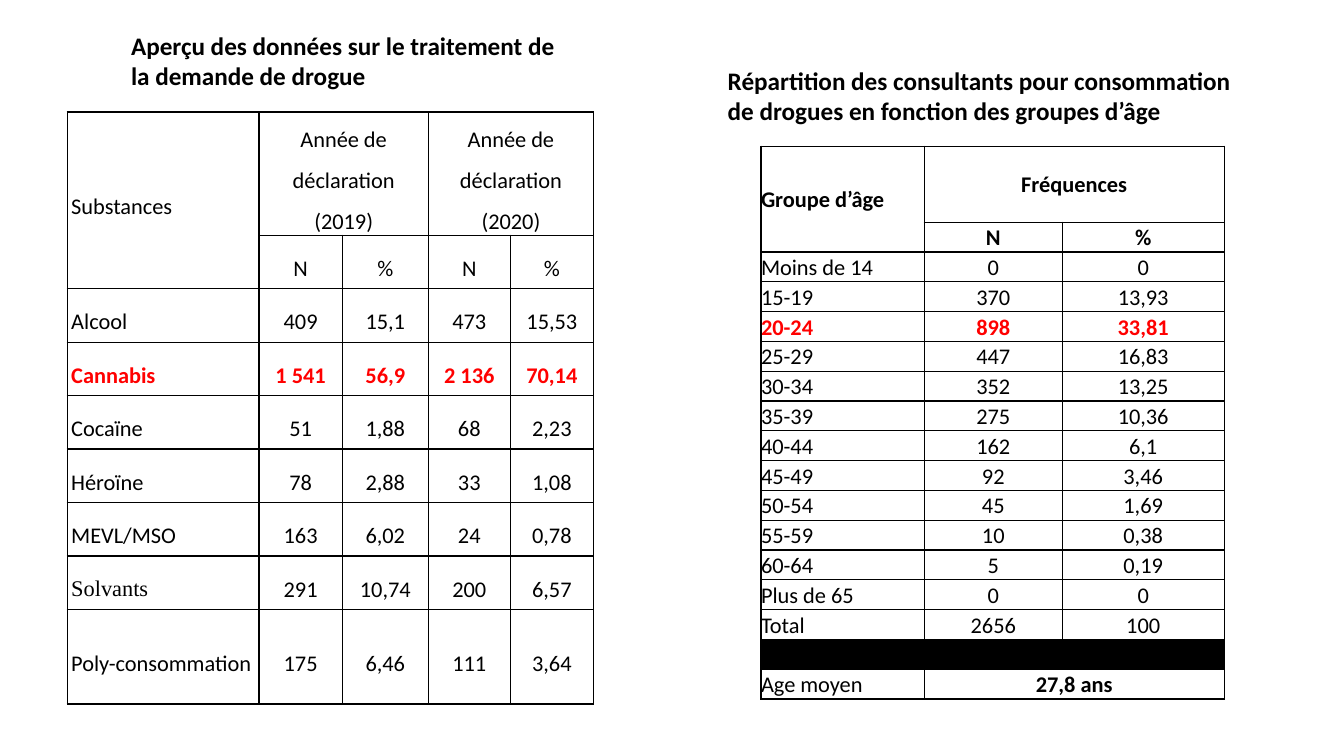
from lxml.etree import SubElement
from pptx import Presentation
from pptx.dml.color import RGBColor
from pptx.enum.text import MSO_ANCHOR as Anchor, MSO_AUTO_SIZE as AutoSize, PP_ALIGN as Align
from pptx.oxml.ns import qn
from pptx.util import Pt

COLOURS = {"ink": "000000", "highlight": "FF0000"}

SUBSTANCES = [
    ("Substances", "Année de déclaration (2019)", "", "Année de déclaration (2020)", ""),
    ("", "N", "%", "N", "%"),
    ("Alcool", "409", "15,1", "473", "15,53"),
    ("Cannabis", "1 541", "56,9", "2 136", "70,14"),
    ("Cocaïne", "51", "1,88", "68", "2,23"),
    ("Héroïne", "78", "2,88", "33", "1,08"),
    ("MEVL/MSO", "163", "6,02", "24", "0,78"),
    ("Solvants", "291", "10,74", "200", "6,57"),
    ("Poly-consommation", "175", "6,46", "111", "3,64"),
]

AGE_GROUPS = [
    ("Groupe d’âge", "Fréquences", ""),
    ("", "N", "%"),
    ("Moins de 14", "0", "0"),
    ("15-19", "370", "13,93"),
    ("20-24", "898", "33,81"),
    ("25-29", "447", "16,83"),
    ("30-34", "352", "13,25"),
    ("35-39", "275", "10,36"),
    ("40-44", "162", "6,1"),
    ("45-49", "92", "3,46"),
    ("50-54", "45", "1,69"),
    ("55-59", "10", "0,38"),
    ("60-64", "5", "0,19"),
    ("Plus de 65", "0", "0"),
    ("Total", "2656", "100"),
    ("", "", ""),
    ("Age moyen", "27,8 ans", ""),
]


def write(frame, text, *, size=16, font="Calibri", colour="ink", bold=False,
          align=Align.LEFT, spacing=1.0):
    """Fill a text frame with one formatted paragraph."""
    paragraph = frame.paragraphs[0]
    paragraph.alignment = align
    paragraph.line_spacing = spacing
    paragraph.space_before = Pt(0)
    words = paragraph.add_run()
    words.text = text
    words.font.size = Pt(size)
    words.font.name = font
    words.font.bold = bold
    words.font.color.rgb = RGBColor.from_string(COLOURS[colour])


def place_heading(heading, box, text):
    """Move a heading placeholder to its box and write its text."""
    heading.left, heading.top, heading.width, heading.height = (Pt(v) for v in box)
    frame = heading.text_frame
    frame.word_wrap = True
    frame.auto_size = AutoSize.NONE
    frame.vertical_anchor = Anchor.TOP
    write(frame, text, size=18, bold=True)


def outline(cell):
    """Draw a thin line on each side of a cell."""
    properties = cell._tc.get_or_add_tcPr()
    for side in ("a:lnL", "a:lnR", "a:lnT", "a:lnB"):
        line = SubElement(properties, qn(side), w=str(Pt(1)))
        fill = SubElement(line, qn("a:solidFill"))
        SubElement(fill, qn("a:srgbClr"), val=COLOURS["ink"])


def place_table(slide, origin, widths, heights, rows, *, merges, highlight, spacing,
                inset=0, label_align=Align.LEFT, bold_cells=(), serif_label=None,
                separator=None):
    """Build a bordered table of labels and centred values at its origin."""
    left, top = origin
    table = slide.shapes.add_table(
        len(rows), len(widths), Pt(left), Pt(top), Pt(sum(widths)), Pt(sum(heights))).table
    table.first_row = table.horz_banding = False
    for column, width in zip(table.columns, widths):
        column.width = Pt(width)
    for r, (values, height) in enumerate(zip(rows, heights)):
        table.rows[r].height = Pt(height)
        for c, value in enumerate(values):
            cell = table.cell(r, c)
            outline(cell)
            cell.margin_left = cell.margin_right = Pt(inset)
            cell.margin_top = cell.margin_bottom = 0
            cell.vertical_anchor = Anchor.MIDDLE
            if r == separator:
                cell.fill.solid()
                cell.fill.fore_color.rgb = RGBColor.from_string(COLOURS["ink"])
            else:
                cell.fill.background()
            write(cell.text_frame, value, spacing=spacing,
                  font="Times New Roman" if value == serif_label else "Calibri",
                  colour="highlight" if r == highlight else "ink",
                  bold=r == highlight or (r, c) in bold_cells,
                  align=Align.CENTER if c else label_align)
    for start, end in merges:
        table.cell(*start).merge(table.cell(*end))


def demand_region(slide, heading, left, top):
    """Place the overview of treatment demand by substance."""
    place_heading(heading, (left + 38.4, top, 330.5, 51),
                  "Aperçu des données sur le traitement de la demande de drogue")
    place_table(slide, (left, top + 62), (137, 59.5, 61.5, 58.5, 59.5),
                [88] + [38.2] * 7 + [67.5], SUBSTANCES,
                merges=[((0, 0), (1, 0)), ((0, 1), (0, 2)), ((0, 3), (0, 4))],
                highlight=3, spacing=1.5, inset=2.9, label_align=Align.JUSTIFY,
                serif_label="Solvants")


def age_region(slide, heading, left, top):
    """Place the distribution of patients by age group."""
    place_heading(heading, (left, top, 392.4, 51),
                  "Répartition des consultants pour consommation de drogues "
                  "en fonction des groupes d’âge")
    place_table(slide, (left + 31, top + 61.2), (116.6, 98.6, 115.6),
                [54.3] + [21.3] * 16, AGE_GROUPS,
                merges=[((0, 0), (1, 0)), ((0, 1), (0, 2)), ((16, 1), (16, 2))],
                highlight=4, spacing=1.07, separator=15,
                bold_cells={(0, 0), (0, 1), (1, 1), (1, 2), (16, 1)})


def main():
    """Assemble the slide and save it."""
    deck = Presentation()
    deck.slide_width, deck.slide_height = Pt(960), Pt(540)
    slide = deck.slides.add_slide(deck.slide_layouts[4])
    demand_heading, age_heading, *unused = slide.placeholders
    for placeholder in unused:
        placeholder.element.getparent().remove(placeholder.element)
    demand_region(slide, demand_heading, 48, 18)
    age_region(slide, age_heading, 512.6, 43.2)
    deck.save("out.pptx")


if __name__ == "__main__":
    main()
